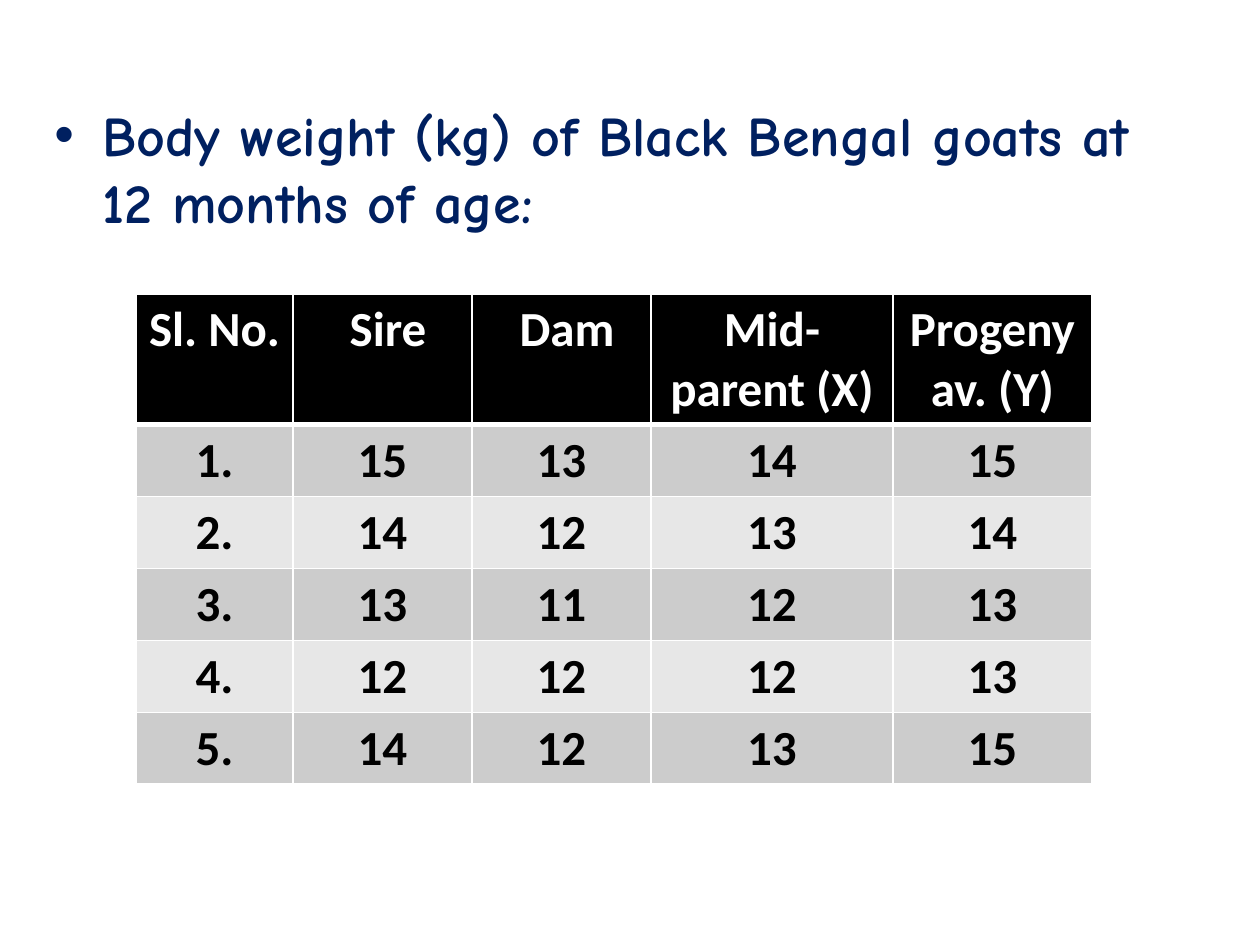
from lxml.etree import SubElement
from pptx import Presentation
from pptx.dml.color import RGBColor
from pptx.enum.text import MSO_ANCHOR, PP_ALIGN
from pptx.oxml.ns import qn
from pptx.util import Pt

SCALE = 914400 / 126
HEX = {"navy": "002060", "black": "000000", "white": "FFFFFF",
       "dark": "CCCCCC", "light": "E7E7E7"}
HEAD = {"name": "Comic Neue", "size": Pt(32), "bold": True}
CELL = {"name": "Calibri", "size": Pt(28), "bold": True}
WIDTHS = [157, 179, 179, 242, 199]
HIGH, LOW = 130, 72
ROWS = [
    ["Sl. No.", " Sire", " Dam", "Mid-parent (X)", "Progeny av. (Y)"],
    ["1.", "15", "13", "14", "15"],
    ["2.", "14", "12", "13", "14"],
    ["3.", "13", "11", "12", "13"],
    ["4.", "12", "12", "12", "13"],
    ["5.", "14", "12", "13", "15"],
]


def px(num):
    return round(num * SCALE)


def tint(name):
    return RGBColor.from_string(HEX[name])


class Deck:
    """Holds the style and the current slide."""

    def __init__(self, wide, high):
        self.show = Presentation()
        self.show.slide_width, self.show.slide_height = px(wide), px(high)
        self.slide = self.show.slides.add_slide(self.show.slide_layouts[6])

    def style(self, para, look, color):
        for key, val in look.items():
            setattr(para.font, key, val)
        para.font.color.rgb = tint(color)

    def bullet(self, box, text, look, color, dent):
        frame = self.slide.shapes.add_textbox(*map(px, box)).text_frame
        frame.word_wrap = True
        frame.vertical_anchor = MSO_ANCHOR.TOP
        para = frame.paragraphs[0]
        para.text = text
        props = para._p.get_or_add_pPr()
        props.set("marL", str(px(dent)))
        props.set("indent", str(-px(dent)))
        SubElement(props, qn("a:buFont"), typeface="Arial")
        SubElement(props, qn("a:buChar"), char="•")
        self.style(para, look, color)

    def edge(self, cell, sides):
        """Draw white cell borders; sides maps each side to its points."""
        props = cell._tc.get_or_add_tcPr()
        for spot, (side, width) in enumerate(sides.items()):
            line = props.makeelement(qn("a:ln" + side), {"w": str(Pt(width))})
            fill = SubElement(line, qn("a:solidFill"))
            SubElement(fill, qn("a:srgbClr"), val=HEX["white"])
            props.insert(spot, line)

    def table(self, left, top, rows, widths, look):
        highs = [HIGH] + [LOW] * (len(rows) - 1)
        box = map(px, (left, top, sum(widths), sum(highs)))
        grid = self.slide.shapes.add_table(len(rows), len(widths), *box).table
        for col, wide in zip(grid.columns, widths):
            col.width = px(wide)
        for num, (row, high, texts) in enumerate(zip(grid.rows, highs, rows)):
            row.height = px(high)
            fill = ("dark" if num % 2 else "light") if num else "black"
            sides = {"L": 1, "R": 1, "T": 1 if num != 1 else 3,
                     "B": 1 if num else 3}
            for cell, text in zip(row.cells, texts):
                cell.fill.solid()
                cell.fill.fore_color.rgb = tint(fill)
                self.edge(cell, sides)
                para = cell.text_frame.paragraphs[0]
                para.text = text
                para.alignment = PP_ALIGN.CENTER
                self.style(para, look, "black" if num else "white")


def main():
    deck = Deck(1260, 945)
    deck.bullet((42, 94, 1155, 750),
                "Body weight (kg) of Black Bengal goats at 12 months of age:",
                HEAD, "navy", 48)
    deck.table(136, 294, ROWS, WIDTHS, CELL)
    deck.show.save("out.pptx")


if __name__ == "__main__":
    main()
